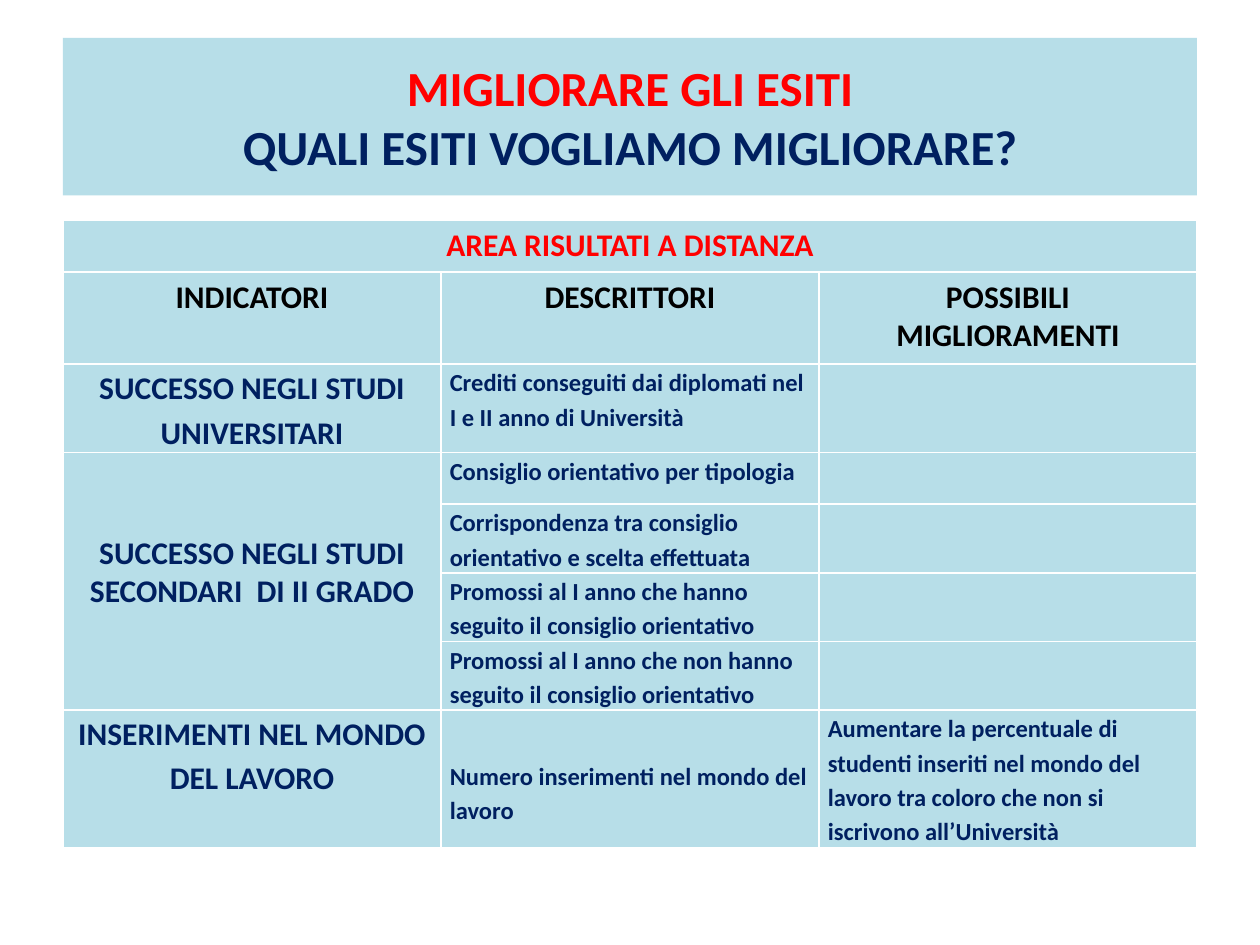
import pptx
import pptx.dml.color
import pptx.enum.shapes
import pptx.enum.text
import pptx.util

RGBColor = pptx.dml.color.RGBColor
ALIGN = pptx.enum.text.PP_ALIGN
PALE_BLUE = RGBColor(0xB7, 0xDE, 0xE8)
RED = RGBColor(0xFF, 0x00, 0x00)
NAVY = RGBColor(0x00, 0x20, 0x60)
BLACK = RGBColor(0x00, 0x00, 0x00)

ROW_HEIGHTS = [8.2, 14.6, 14, 8.2, 10.8, 10.8, 10.8, 21.8]
HEADINGS = ["INDICATORI", "DESCRITTORI", "POSSIBILI MIGLIORAMENTI"]
DESCRIPTORS = [
    "Crediti conseguiti dai diplomati nel I e II anno di Università",
    "Consiglio orientativo per tipologia",
    "Corrispondenza tra consiglio orientativo e scelta effettuata",
    "Promossi al I anno che hanno seguito il consiglio orientativo",
    "Promossi al I anno che non hanno seguito il consiglio orientativo",
]
IMPROVEMENT = ("Aumentare la percentuale di studenti inseriti nel mondo del "
               "lavoro tra coloro che non si iscrivono all’Università")


class Deck:
    """Slide on a grid of 20 columns by 150 rows, with its text style."""

    font = "Calibri"

    def __init__(self):
        self.prs = pptx.Presentation()
        self.prs.slide_width = pptx.util.Inches(10)
        self.prs.slide_height = pptx.util.Inches(7.5)
        self.s = self.prs.slides.add_slide(self.prs.slide_layouts[6])

    def cols(self, n):
        return int(self.prs.slide_width * n / 20)

    def rows(self, n):
        return int(self.prs.slide_height * n / 150)

    def style(self, p, size, color, align):
        p.alignment = align
        for r in p.runs:
            r.font.name = self.font
            r.font.size = pptx.util.Pt(size)
            r.font.bold = True
            r.font.color.rgb = color

    def banner(self, x, y, w, h, lines, size):
        sp = self.s.shapes.add_shape(
            pptx.enum.shapes.MSO_SHAPE.RECTANGLE,
            self.cols(x), self.rows(y), self.cols(w), self.rows(h))
        sp.shadow.inherit = False
        sp.fill.solid()
        sp.fill.fore_color.rgb = PALE_BLUE
        sp.line.fill.background()
        tf = sp.text_frame
        tf.vertical_anchor = pptx.enum.text.MSO_ANCHOR.MIDDLE
        tf.text = "\n".join(text for text, _ in lines)
        for p, (_, color) in zip(tf.paragraphs, lines):
            self.style(p, size, color, ALIGN.CENTER)

    def table(self, x, y, w, heights, columns):
        table = self.s.shapes.add_table(
            len(heights), columns, self.cols(x), self.rows(y),
            self.cols(w), self.rows(sum(heights))).table
        for row, height in zip(table.rows, heights):
            row.height = self.rows(height)
        for cell in table.iter_cells():
            cell.fill.solid()
            cell.fill.fore_color.rgb = PALE_BLUE
        return table

    def heading(self, cell, text, color, top=1):
        cell.text = text
        cell.margin_top = self.rows(top)
        self.style(cell.text_frame.paragraphs[0], 18, color, ALIGN.CENTER)

    def entry(self, cell, text, size=14, align=ALIGN.LEFT, top=0):
        cell.text = text
        cell.margin_left = cell.margin_right = pptx.util.Inches(0.07)
        cell.margin_top, cell.margin_bottom = self.rows(top), 0
        p = cell.text_frame.paragraphs[0]
        p.line_spacing = 1.15
        p.space_after = pptx.util.Pt(10)
        self.style(p, size, NAVY, align)


def main():
    deck = Deck()
    deck.banner(1, 6, 18, 25, [("MIGLIORARE GLI ESITI", RED),
                               ("QUALI ESITI VOGLIAMO MIGLIORARE?", NAVY)], 28)

    table = deck.table(1, 35, 18, ROW_HEIGHTS, len(HEADINGS))
    table.cell(0, 0).merge(table.cell(0, 2))
    table.cell(3, 0).merge(table.cell(6, 0))

    deck.heading(table.cell(0, 0), "AREA RISULTATI A DISTANZA", RED)
    for column, text in enumerate(HEADINGS):
        deck.heading(table.cell(1, column), text, BLACK)

    deck.entry(table.cell(2, 0), "SUCCESSO NEGLI STUDI UNIVERSITARI", 18, ALIGN.CENTER)
    deck.heading(table.cell(3, 0), "SUCCESSO NEGLI STUDI SECONDARI  DI II GRADO", NAVY, top=13)
    deck.entry(table.cell(7, 0), "INSERIMENTI NEL MONDO DEL LAVORO", 18, ALIGN.CENTER)

    for row, text in enumerate(DESCRIPTORS, start=2):
        deck.entry(table.cell(row, 1), text)
    deck.entry(table.cell(7, 1), "Numero inserimenti nel mondo del lavoro", top=7.5)
    deck.entry(table.cell(7, 2), IMPROVEMENT)

    deck.prs.save("out.pptx")


if __name__ == "__main__":
    main()
